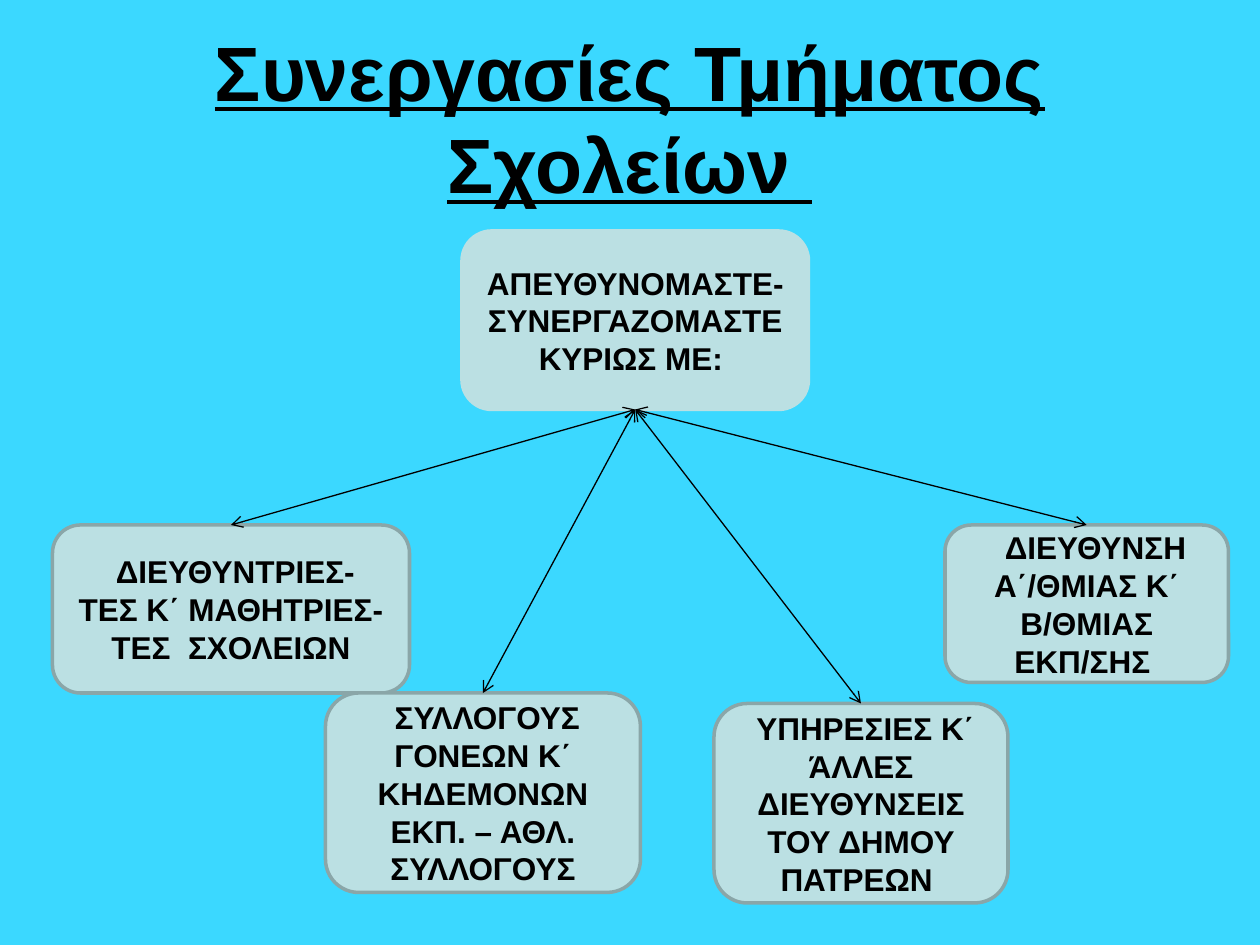
"""Builds the slide on the partners of the schools department."""
from lxml.etree import SubElement as Sub
from pptx import Presentation
from pptx.dml.color import RGBColor
from pptx.enum.shapes import MSO_CONNECTOR as Conn, MSO_SHAPE as Form
from pptx.enum.text import MSO_ANCHOR as Anchor, PP_ALIGN as Align
from pptx.oxml.ns import qn
from pptx.util import Pt

SKY = RGBColor(0x3B, 0xD8, 0xFF)
PALE = RGBColor(0xBB, 0xE0, 0xE3)
EDGE = RGBColor(0x8A, 0xA6, 0xA8)
BLACK = RGBColor(0, 0, 0)

TITLE = "Συνεργασίες Τμήματος Σχολείων "
HUB = ((264, 132, 198, 102), [["ΑΠΕΥΘΥΝΟΜΑΣΤΕ-ΣΥΝΕΡΓΑΖΟΜΑΣΤΕ ΚΥΡΙΩΣ ΜΕ: "]])
LEAVES = [
    ((30, 300, 204, 96),
     [[" ", "ΔΙΕΥΘΥΝΤΡΙΕΣ-"], ["ΤΕΣ Κ΄ ΜΑΘΗΤΡΙΕΣ-ΤΕΣ  ΣΧΟΛΕΙΩΝ"]]),
    ((186, 396, 180, 114),
     [[" ", "ΣΥΛΛΟΓΟΥΣ ΓΟΝΕΩΝ Κ΄ ΚΗΔΕΜΟΝΩΝ"], ["ΕΚΠ. – ΑΘΛ. ΣΥΛΛΟΓΟΥΣ"]]),
    ((408, 402, 168, 114),
     [[" ", "ΥΠΗΡΕΣΙΕΣ Κ΄ ΆΛΛΕΣ ΔΙΕΥΘΥΝΣΕΙΣ ΤΟΥ ΔΗΜΟΥ ΠΑΤΡΕΩΝ "]]),
    ((540, 300, 162, 90),
     [["  ", "ΔΙΕΥΘΥΝΣΗ Α΄/ΘΜΙΑΣ Κ΄ Β/ΘΜΙΑΣ ΕΚΠ/ΣΗΣ "]]),
]


def write(shape, paras, size, under=None):
    frame = shape.text_frame
    frame.word_wrap = True
    frame.vertical_anchor = Anchor.MIDDLE
    for i, words in enumerate(paras):
        para = frame.add_paragraph() if i else frame.paragraphs[0]
        para.alignment = Align.CENTER
        for word in words:
            run = para.add_run()
            run.text = word
            font = run.font
            font.name, font.size = "Arial", Pt(size)
            font.bold, font.underline = bool(word.strip()), under
            font.color.rgb = BLACK


def add_box(slide, spot, paras, edge):
    box = slide.shapes.add_shape(Form.ROUNDED_RECTANGLE, *map(Pt, spot))
    box.shadow.inherit = False
    box.fill.solid()
    box.fill.fore_color.rgb = PALE
    box.line.color.rgb = edge
    box.line.width = Pt(2)
    write(box, paras, 18)
    return box


def link(slide, hub, leaf):
    wire = slide.shapes.add_connector(Conn.STRAIGHT, 0, 0, 0, 0)
    wire.begin_connect(hub, 2)
    wire.end_connect(leaf, 0)
    wire.line.color.rgb = BLACK
    wire.line.width = Pt(0.75)
    line = wire.line._get_or_add_ln()
    for tag in ("a:headEnd", "a:tailEnd"):
        Sub(line, qn(tag), type="arrow")
    Sub(wire._element.spPr, qn("a:effectLst"))


def main():
    deck = Presentation()
    deck.slide_width, deck.slide_height = Pt(720), Pt(540)
    slide = deck.slides.add_slide(deck.slide_layouts[6])
    fill = slide.background.fill
    fill.solid()
    fill.fore_color.rgb = SKY
    title = slide.shapes.add_textbox(Pt(36), Pt(21.6), Pt(648), Pt(90))
    write(title, [[TITLE]], 44, True)
    hub = add_box(slide, *HUB, PALE)
    boxes = [add_box(slide, *leaf, EDGE) for leaf in LEAVES]
    for box in boxes:
        link(slide, hub, box)
    deck.save("out.pptx")


if __name__ == "__main__":
    main()
